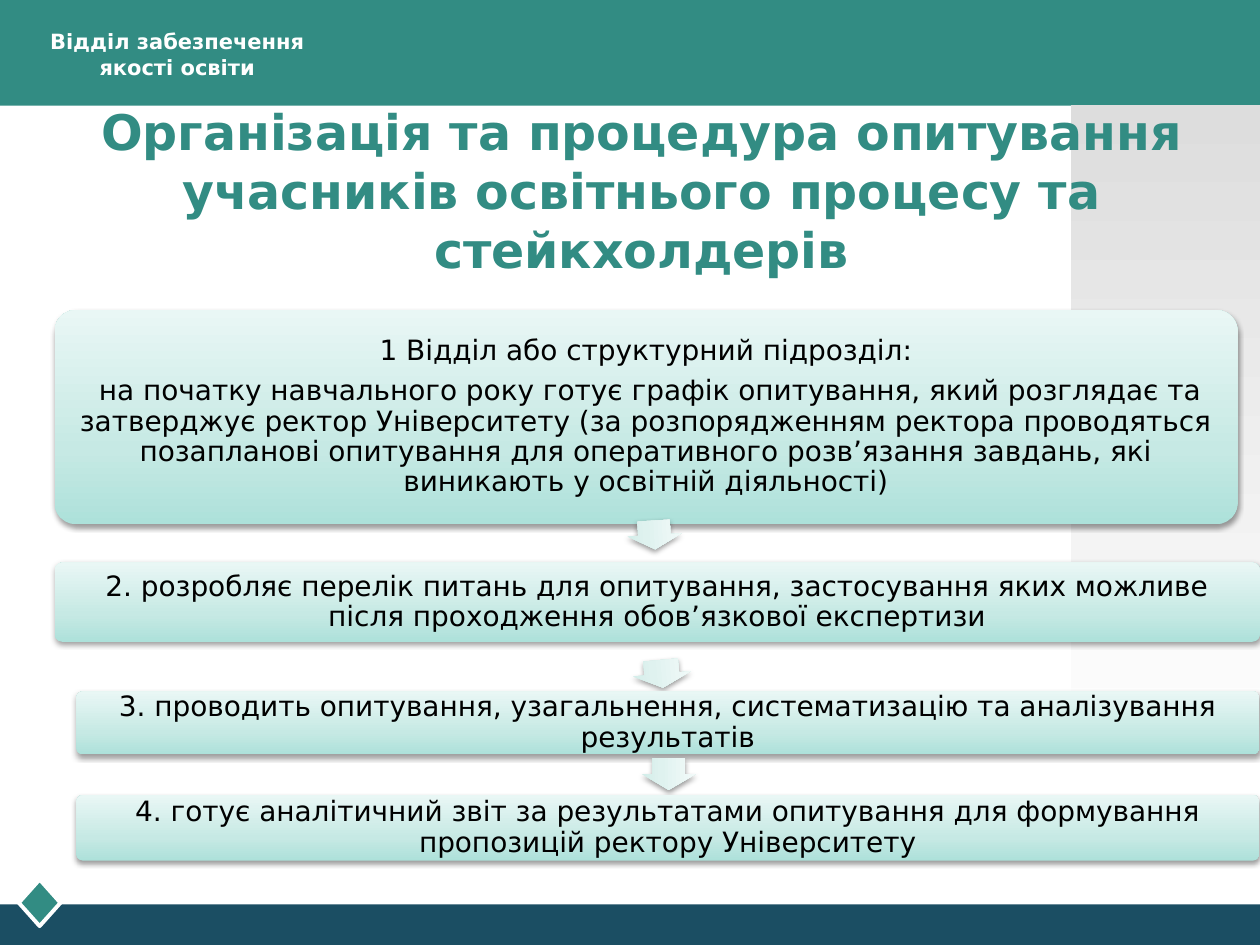
"""Build the slide on how surveys of students and stakeholders are organised."""
from copy import deepcopy
from typing import NamedTuple, Optional, Sequence

from lxml.etree import SubElement
from pptx import Presentation
from pptx.dml.color import RGBColor
from pptx.enum.shapes import MSO_SHAPE as Preset
from pptx.enum.text import MSO_ANCHOR as Anchor, PP_ALIGN as Align
from pptx.oxml.ns import qn
from pptx.shapes.autoshape import Shape
from pptx.slide import Slide
from pptx.util import Cm, Pt

TEAL = RGBColor(0x32, 0x8C, 0x83)
NAVY = RGBColor(0x1B, 0x4E, 0x63)
WHITE = RGBColor(0xFF, 0xFF, 0xFF)
BLACK = RGBColor(0x00, 0x00, 0x00)
SILVER = RGBColor(0xDD, 0xDD, 0xDD)
MINT = RGBColor(0xAD, 0xE1, 0xDA)
MINT_MID = RGBColor(0xC6, 0xE9, 0xE4)
MINT_LIGHT = RGBColor(0xE9, 0xF7, 0xF5)
PALE = RGBColor(0xD2, 0xED, 0xE9)
PALE_MID = RGBColor(0xDF, 0xF2, 0xEF)
PALE_LIGHT = RGBColor(0xF2, 0xFA, 0xF9)

FONT = "DejaVu Sans"
SIDE_FADE = ((0, SILVER), (1, WHITE))
STEP_FADE = ((0, MINT), (0.35, MINT_MID), (1, MINT_LIGHT))
ARROW_FADE = ((0, PALE), (0.35, PALE_MID), (1, PALE_LIGHT))


class Box(NamedTuple):
    left: float
    top: float
    width: float
    height: float


class Arrow(NamedTuple):
    box: Box
    rotation: float


class Step(NamedTuple):
    box: Box
    text: str
    arrow: Optional[Arrow] = None


STEPS = (
    Step(
        Box(1.1, 6.25, 23.85, 4.32),
        "1 Відділ або структурний підрозділ:\n"
        " на початку навчального року готує графік опитування, який розглядає та "
        "затверджує ректор Університету (за розпорядженням ректора проводяться "
        "позапланові опитування для оперативного розв’язання завдань, які "
        "виникають у освітній діяльності)",
        Arrow(Box(12.9, 10.24, 0.58, 1.09), 86.6),
    ),
    Step(
        Box(1.1, 11.34, 24.3, 1.6),
        "2. розробляє перелік питань для опитування, застосування яких можливе "
        "після проходження обов’язкової експертизи",
        Arrow(Box(13.06, 13, 0.56, 1.17), 84.8),
    ),
    Step(
        Box(1.54, 13.94, 23.85, 1.27),
        "3. проводить опитування, узагальнення, систематизацію та аналізування "
        "результатів",
        Arrow(Box(13.16, 15.06, 0.64, 1.09), 90),
    ),
    Step(
        Box(1.54, 16.03, 23.85, 1.32),
        "4. готує аналітичний звіт за результатами опитування для формування "
        "пропозицій ректору Університету",
    ),
)


def add_preset(slide: Slide, preset: Preset, box: Box,
               color: Optional[RGBColor] = None) -> Shape:
    shape = slide.shapes.add_shape(preset, *map(Cm, box))
    shape.shadow.inherit = False
    shape.line.fill.background()
    if color is not None:
        shape.fill.solid()
        shape.fill.fore_color.rgb = color
    return shape


def fade(shape: Shape, stops: Sequence[tuple[float, RGBColor]], angle: float) -> None:
    shape.fill.gradient()
    shape.fill.gradient_angle = angle
    stop_list = shape._element.spPr.find(qn("a:gradFill")).find(qn("a:gsLst"))
    while len(stop_list) < len(stops):
        stop_list.append(deepcopy(stop_list[0]))
    for stop, (position, color) in zip(shape.fill.gradient_stops, stops):
        stop.position = position
        stop.color.rgb = color


def cast_shadow(shape: Shape) -> None:
    effects = shape._element.spPr.find(qn("a:effectLst"))
    outer = SubElement(effects, qn("a:outerShdw"), blurRad=str(Pt(3.1)),
                       dist=str(Pt(1.6)), dir="5400000", rotWithShape="0")
    tint = SubElement(outer, qn("a:srgbClr"), val="000000")
    SubElement(tint, qn("a:alpha"), val="38000")


def write(shape: Shape, text: str, size: float, color: RGBColor,
          bold: bool = False) -> None:
    frame = shape.text_frame
    frame.word_wrap = True
    frame.text = text
    for paragraph in frame.paragraphs:
        paragraph.alignment = Align.CENTER
        for run in paragraph.runs:
            run.font.name = FONT
            run.font.size = Pt(size)
            run.font.bold = bold
            run.font.color.rgb = color


def add_heading(slide: Slide, box: Box, text: str, size: float, color: RGBColor) -> None:
    heading = slide.shapes.add_textbox(*map(Cm, box))
    write(heading, text, size, color, True)


def add_arrow(slide: Slide, arrow: Arrow) -> None:
    pointer = add_preset(slide, Preset.RIGHT_ARROW, arrow.box)
    pointer.adjustments[0] = 0.6
    pointer.adjustments[1] = 0.5
    pointer.rotation = arrow.rotation
    fade(pointer, ARROW_FADE, 90)
    cast_shadow(pointer)


def add_step(slide: Slide, step: Step) -> None:
    card = add_preset(slide, Preset.ROUNDED_RECTANGLE, step.box)
    card.adjustments[0] = 0.1
    fade(card, STEP_FADE, 90)
    cast_shadow(card)
    write(card, step.text, 16, BLACK)
    frame = card.text_frame
    frame.vertical_anchor = Anchor.MIDDLE
    frame.margin_left = frame.margin_right = Cm(0.17)
    frame.margin_top = frame.margin_bottom = Cm(0.17)
    for paragraph in frame.paragraphs:
        paragraph.line_spacing = 0.9
        paragraph.space_after = Pt(5.6)
    if step.arrow:
        add_arrow(slide, step.arrow)


def add_background(slide: Slide) -> None:
    add_preset(slide, Preset.RECTANGLE, Box(0, 0, 25.4, 2.13), TEAL)
    add_preset(slide, Preset.RECTANGLE, Box(0, 18.23, 25.4, 0.82), NAVY)
    diamond = add_preset(slide, Preset.DIAMOND, Box(0.38, 17.73, 0.84, 0.94), TEAL)
    diamond.line.color.rgb = WHITE
    diamond.line.width = Pt(2.25)
    side_panel = add_preset(slide, Preset.RECTANGLE, Box(21.59, 2.11, 3.81, 13.34))
    fade(side_panel, SIDE_FADE, 270)


def main() -> None:
    deck = Presentation()
    deck.slide_width, deck.slide_height = Cm(25.4), Cm(19.05)
    slide = deck.slides.add_slide(deck.slide_layouts[6])
    add_background(slide)
    add_heading(slide, Box(0.3, 0.46, 6.55, 1.68), "Відділ забезпечення якості освіти",
                12, WHITE)
    add_heading(slide, Box(1.5, 1.93, 22.86, 3.99),
                "Організація та процедура опитування учасників освітнього процесу "
                "та стейкхолдерів", 28, TEAL)
    for step in STEPS:
        add_step(slide, step)
    deck.save("out.pptx")


if __name__ == "__main__":
    main()
